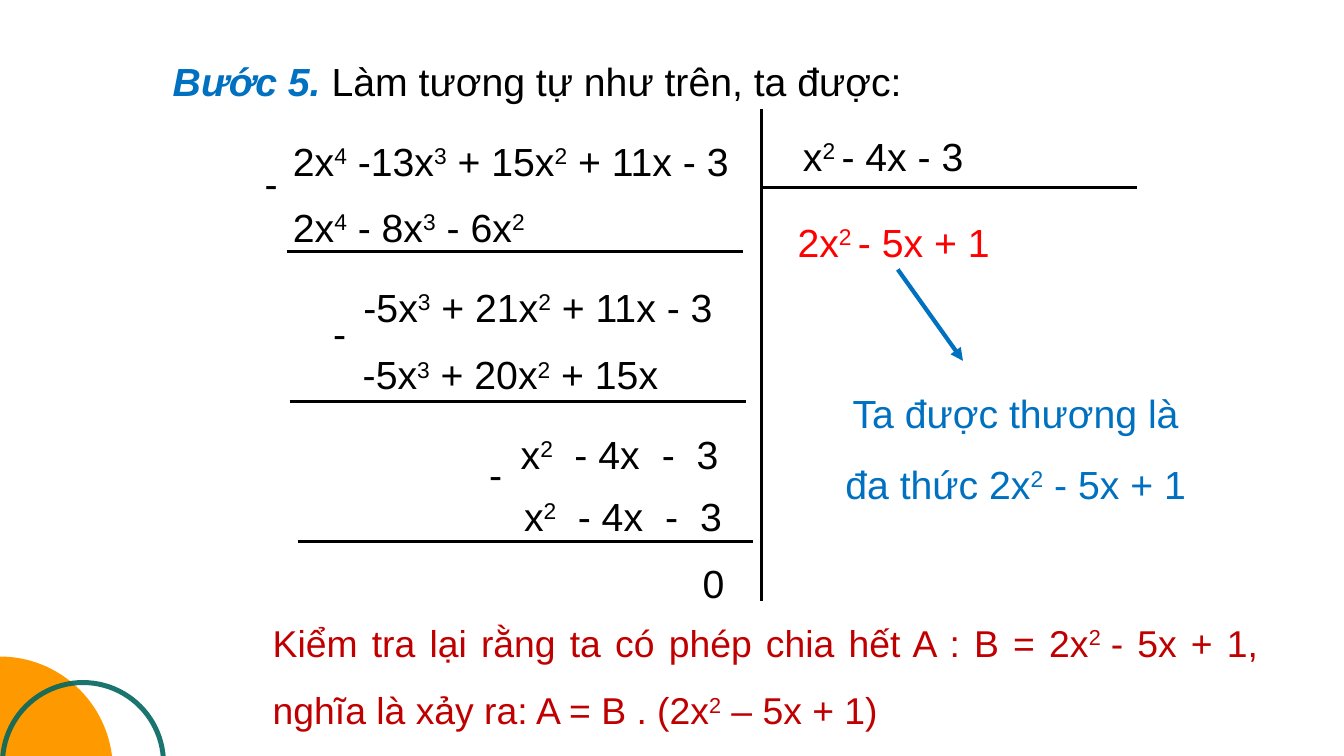
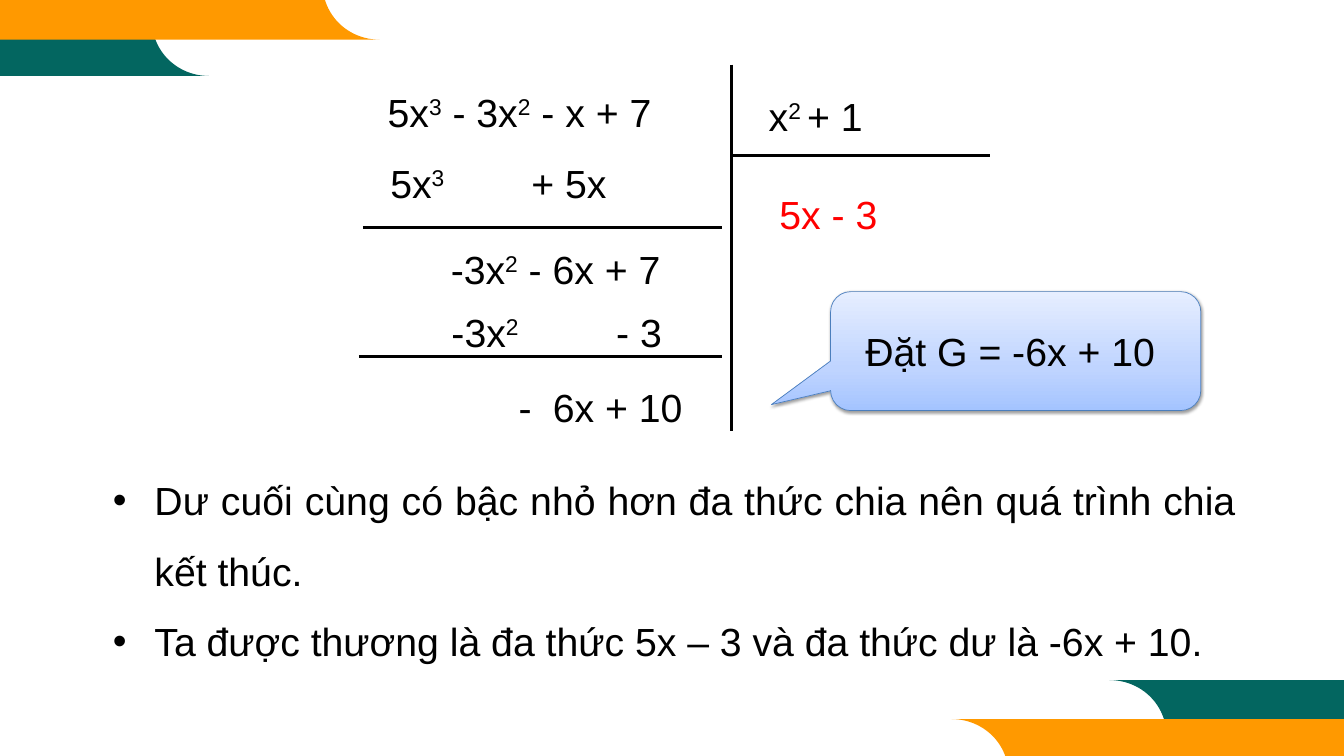
from copy import deepcopy
from dataclasses import dataclass

from lxml import etree
from pptx import Presentation
from pptx.dml.color import RGBColor
from pptx.enum.shapes import MSO_CONNECTOR, MSO_SHAPE
from pptx.enum.text import MSO_ANCHOR, MSO_AUTO_SIZE, PP_ALIGN
from pptx.oxml.ns import qn
from pptx.shapes.autoshape import Shape
from pptx.shapes.connector import Connector
from pptx.slide import Slide
from pptx.text.text import TextFrame
from pptx.util import Inches, Pt

BLACK = RGBColor(0x00, 0x00, 0x00)
RED = RGBColor(0xFF, 0x00, 0x00)
DARK_RED = RGBColor(0xC0, 0x00, 0x00)
BLUE = RGBColor(0x00, 0x70, 0xC0)
ORANGE = RGBColor(0xFF, 0x99, 0x00)
GREEN = RGBColor(0x03, 0x66, 0x60)
CALLOUT_EDGE = RGBColor(0x4B, 0x7E, 0xBC)
CALLOUT_STOPS = (
    (0.0, RGBColor(0xA4, 0xC4, 0xFF)),
    (0.35, RGBColor(0xBF, 0xD4, 0xFF)),
    (1.0, RGBColor(0xE6, 0xEE, 0xFF)),
)

CENTER, RIGHT, JUSTIFY = PP_ALIGN.CENTER, PP_ALIGN.RIGHT, PP_ALIGN.JUSTIFY
TOP, MIDDLE = MSO_ANCHOR.TOP, MSO_ANCHOR.MIDDLE
NO_AUTOFIT = MSO_AUTO_SIZE.NONE
STRAIGHT = MSO_CONNECTOR.STRAIGHT
OVAL, DONUT = MSO_SHAPE.OVAL, MSO_SHAPE.DONUT
CALLOUT = MSO_SHAPE.ROUNDED_RECTANGULAR_CALLOUT

FONT = "Arial"
TITLE_ONLY, BLANK = 5, 6
# Half circle as three Bezier curves: (depth, drop) from the band's corner.
HOLLOW = ((0, 0), (0.31, 0), (0.59, 0.16), (0.74, 0.42), (0.89, 0.68),
          (0.89, 1.01), (0.74, 1.27), (0.59, 1.53), (0.31, 1.69), (0, 1.69))


@dataclass(frozen=True)
class Style:
    colour: RGBColor = BLACK
    size: float = 42
    align: PP_ALIGN = JUSTIFY
    spacing: float = 1.5
    before: float = 0
    after: float = 8


@dataclass(frozen=True)
class Passage:
    """Text with superscripts in braces; tabs are stops in inches."""
    text: str
    left: float
    top: float
    width: float
    height: float = 1.16
    style: Style = Style()
    tabs: tuple[float, ...] = ()


@dataclass(frozen=True)
class Rule:
    x1: float
    y1: float
    x2: float
    y2: float
    colour: RGBColor = BLACK
    weight: float = 3


@dataclass(frozen=True)
class Band:
    left: float
    top: float
    width: float
    colour: RGBColor


SINGLE = Style(spacing=1)
QUOTIENT = Style(colour=RED)
MINUS = Style(align=CENTER, spacing=1, after=0)
REMAINDER = Style(align=RIGHT, spacing=1, after=0)
HEADING = Style(before=6, after=6)
RESULT = Style(colour=BLUE, align=CENTER, before=6, after=6)
CHECK = Style(colour=DARK_RED, size=40, before=6, after=6)
BULLET = Style(after=0)

LAST_ROW_TABS = (0.8, 2.1, 2.62)

STEP_TERMS = (
    Passage("2x{4} -13x{3} + 15x{2} + 11x - 3", 4.26, 1.64, 7.1),
    Passage("2x{4} - 8x{3} - 6x{2}", 4.26, 2.63, 5.16),
    Passage("-5x{3} + 21x{2} + 11x - 3", 5.31, 3.81, 5.74, 0.98),
    Passage("-5x{3} + 20x{2} + 15x", 5.3, 4.82, 5.1),
    Passage("x{2}\t- 4x\t-\t3", 7.65, 6, 3.44, 1.03, tabs=LAST_ROW_TABS),
    Passage("x{2}\t- 4x\t-\t3", 7.7, 6.92, 3.44, 1.03, tabs=LAST_ROW_TABS),
    Passage("0", 9.4, 8.27, 1.48, 0.81, REMAINDER),
    Passage("x{2 }- 4x - 3", 11.85, 1.57, 3.45),
    Passage("2x{2 }- 5x + 1", 11.77, 2.85, 3.2, style=QUOTIENT),
    Passage("Ta được thương là đa thức 2x{2} - 5x + 1",
            12.26, 5.4, 5.71, 2.09, RESULT),
    Passage("Kiểm tra lại rằng ta có phép chia hết A : B = 2x{2 }- 5x + 1, "
            "nghĩa là xảy ra: A = B . (2x{2} – 5x + 1)",
            3.96, 8.84, 14.86, 2, CHECK),
)
MINUS_PLACES = ((3.7, 2.32), (4.72, 4.56), (7.04, 6.65))
STEP_RULES = (
    Rule(11.33, 1.62, 11.33, 8.95),
    Rule(11.33, 2.79, 16.92, 2.79),
    Rule(4.27, 3.74, 11.05, 3.74),
    Rule(4.31, 5.98, 11.1, 5.98),
    Rule(4.43, 8.06, 11.21, 8.06),
)
RESULT_ARROW = Rule(13.36, 4.01, 14.33, 5.37, BLUE, 4.5)

REMAINDER_TERMS = (
    Passage("5x{3} - 3x{2} - x + 7", 5.67, 0.91, 4.94, 0.92),
    Passage("5x{3}\t+ 5x", 5.71, 2.32, 5.41, 0.82, SINGLE, (2.1,)),
    Passage("-3x{2} - 6x + 7", 6.61, 3.25, 4.13, 0.85),
    Passage("-3x{2}\t- 3", 6.62, 4.19, 4.43, tabs=(2.45,)),
    Passage("-\t6x + 10", 7.62, 5.31, 3.79, tabs=(0.51,)),
    Passage("x{2 }+ 1", 11.34, 0.97, 3.12, 0.8),
    Passage("5x - 3", 11.5, 2.43, 2.51, 0.9, QUOTIENT),
)
REMAINDER_RULES = (
    Rule(10.89, 0.96, 10.89, 6.42),
    Rule(10.87, 2.31, 14.73, 2.31),
    Rule(5.4, 3.38, 10.74, 3.38),
    Rule(5.34, 5.31, 10.74, 5.31),
)
CONCLUSIONS = (
    "Dư cuối cùng có bậc nhỏ hơn đa thức chia nên quá trình chia kết thúc.",
    "Ta được thương là đa thức 5x – 3 và đa thức dư là -6x + 10.",
)
BANDS = (
    Band(-1.37, -0.56, 4.48, GREEN),
    Band(-4.49, -1.1, 10.14, ORANGE),
    Band(16.51, 10.12, 4.48, GREEN),
    Band(14.16, 10.7, 10.14, ORANGE),
)


def add_run(paragraph, text: str, style: Style):
    run = paragraph.add_run()
    run.text = text
    run.font.name = FONT
    run.font.size = Pt(style.size)
    run.font.color.rgb = style.colour
    return run


def format_paragraph(paragraph, style: Style) -> None:
    paragraph.alignment = style.align
    paragraph.line_spacing = style.spacing
    paragraph.space_before = Pt(style.before)
    paragraph.space_after = Pt(style.after)


def prepare_frame(frame: TextFrame, anchor: MSO_ANCHOR = TOP) -> None:
    frame.word_wrap = True
    frame.auto_size = NO_AUTOFIT
    frame.vertical_anchor = anchor


def add_frame(slide: Slide, left: float, top: float, width: float, height: float) -> TextFrame:
    box = slide.shapes.add_textbox(Inches(left), Inches(top), Inches(width), Inches(height))
    prepare_frame(box.text_frame)
    return box.text_frame


def add_passage(slide: Slide, passage: Passage) -> None:
    frame = add_frame(slide, passage.left, passage.top, passage.width, passage.height)
    paragraph = frame.paragraphs[0]
    format_paragraph(paragraph, passage.style)
    for index, part in enumerate(passage.text.replace("}", "{").split("{")):
        if part:
            run = add_run(paragraph, part, passage.style)
            if index % 2:
                run.font._element.set("baseline", "30000")
    if passage.tabs:
        stops = etree.SubElement(paragraph._p.get_or_add_pPr(), qn("a:tabLst"))
        for stop in passage.tabs:
            etree.SubElement(stops, qn("a:tab"), pos=str(Inches(stop)), algn="l")


def add_rule(slide: Slide, rule: Rule) -> Connector:
    connector = slide.shapes.add_connector(
        STRAIGHT, Inches(rule.x1), Inches(rule.y1), Inches(rule.x2), Inches(rule.y2))
    connector.line.color.rgb = rule.colour
    connector.line.width = Pt(rule.weight)
    etree.SubElement(connector._element.spPr, qn("a:effectLst"))
    return connector


def add_arrow(slide: Slide, rule: Rule) -> None:
    line = add_rule(slide, rule).line
    etree.SubElement(line._get_or_add_ln(), qn("a:tailEnd"), type="triangle")


def paint(shape: Shape, colour: RGBColor) -> None:
    shape.shadow.inherit = False
    shape.fill.solid()
    shape.fill.fore_color.rgb = colour
    shape.line.fill.background()


def bend(segments: list) -> None:
    """Turn each three straight segments into one Bezier curve."""
    for first in range(0, len(segments), 3):
        curve = etree.Element(qn("a:cubicBezTo"))
        segments[first].addprevious(curve)
        for segment in segments[first:first + 3]:
            curve.append(segment[0])
            segment.getparent().remove(segment)


def add_band(slide: Slide, band: Band) -> None:
    """Draw a strip whose two ends are hollowed by half circles."""
    right = band.left + band.width
    outline = [(right - depth, band.top + drop) for depth, drop in HOLLOW]
    outline += [(band.left + depth, band.top + drop) for depth, drop in reversed(HOLLOW)]
    points = [(Inches(x), Inches(y)) for x, y in outline]
    builder = slide.shapes.build_freeform(*points[0])
    builder.add_line_segments(points[1:])
    strip = builder.convert_to_shape()
    segments = list(strip._element.spPr.iter(qn("a:lnTo")))
    curved = len(HOLLOW) - 1
    bend(segments[:curved])
    bend(segments[curved + 1:2 * curved + 1])
    paint(strip, band.colour)


def add_corner_circles(slide: Slide) -> None:
    disc = slide.shapes.add_shape(OVAL, Inches(-1.68), Inches(9.77), Inches(3.36), Inches(3.38))
    paint(disc, ORANGE)
    ring = slide.shapes.add_shape(DONUT, Inches(0), Inches(10.12), Inches(2.47), Inches(2.47))
    ring.adjustments[0] = 0.03
    paint(ring, GREEN)
    colour = ring._element.spPr.find(f"{qn('a:solidFill')}/{qn('a:srgbClr')}")
    etree.SubElement(colour, qn("a:alpha"), val="90000")


def add_remainder_callout(slide: Slide) -> None:
    callout = slide.shapes.add_shape(
        CALLOUT, Inches(12.36), Inches(4.34), Inches(5.51), Inches(1.77))
    for index, value in enumerate((-0.66, 0.45, 0.17)):
        callout.adjustments[index] = value
    callout.fill.gradient()
    callout.fill.gradient_angle = 90
    properties = callout._element.spPr
    stop_list = properties.find(f"{qn('a:gradFill')}/{qn('a:gsLst')}")
    stop_list.append(deepcopy(stop_list[0]))
    for stop, (position, colour) in zip(callout.fill.gradient_stops, CALLOUT_STOPS):
        stop.position = position
        stop.color.rgb = colour
    callout.line.color.rgb = CALLOUT_EDGE
    callout.line.width = Pt(0.75)
    callout.shadow.inherit = False
    shadow = etree.SubElement(
        properties.find(qn("a:effectLst")), qn("a:outerShdw"),
        blurRad=str(Pt(3.1)), dist=str(Pt(1.6)), dir="5400000", rotWithShape="0")
    shade = etree.SubElement(shadow, qn("a:srgbClr"), val=str(BLACK))
    etree.SubElement(shade, qn("a:alpha"), val="38000")
    prepare_frame(callout.text_frame, MIDDLE)
    paragraph = callout.text_frame.paragraphs[0]
    format_paragraph(paragraph, MINUS)
    add_run(paragraph, "Đặt G = -6x + 10 ", MINUS)


def add_conclusions(slide: Slide) -> None:
    frame = add_frame(slide, 1.58, 6.69, 16.91, 3.28)
    for index, conclusion in enumerate(CONCLUSIONS):
        paragraph = frame.add_paragraph() if index else frame.paragraphs[0]
        format_paragraph(paragraph, BULLET)
        properties = paragraph._p.get_or_add_pPr()
        properties.set("marL", str(Inches(0.62)))
        properties.set("indent", str(Inches(-0.62)))
        etree.SubElement(properties, qn("a:buFont"), typeface=FONT)
        etree.SubElement(properties, qn("a:buChar"), char="•")
        add_run(paragraph, conclusion, BULLET)


def set_step_title(slide: Slide) -> None:
    title = slide.shapes.title
    title.left, title.top = Inches(2.47), Inches(0.45)
    title.width, title.height = Inches(14.85), Inches(1.16)
    prepare_frame(title.text_frame)
    paragraph = title.text_frame.paragraphs[0]
    format_paragraph(paragraph, HEADING)
    step = add_run(paragraph, "Bước 5. ", HEADING)
    step.font.color.rgb = BLUE
    step.font.bold = step.font.italic = True
    add_run(paragraph, "Làm tương tự như trên, ta được:", HEADING)


def add_division(slide: Slide, terms: tuple[Passage, ...], rules: tuple[Rule, ...]) -> None:
    for rule in rules:
        add_rule(slide, rule)
    for term in terms:
        add_passage(slide, term)


def main() -> None:
    deck = Presentation()
    deck.slide_width, deck.slide_height = Inches(20), Inches(11.25)

    exact = deck.slides.add_slide(deck.slide_layouts[TITLE_ONLY])
    add_corner_circles(exact)
    set_step_title(exact)
    add_division(exact, STEP_TERMS, STEP_RULES)
    for left, top in MINUS_PLACES:
        add_passage(exact, Passage("-", left, top, 0.67, 0.81, MINUS))
    add_arrow(exact, RESULT_ARROW)

    with_remainder = deck.slides.add_slide(deck.slide_layouts[BLANK])
    for band in BANDS:
        add_band(with_remainder, band)
    add_division(with_remainder, REMAINDER_TERMS, REMAINDER_RULES)
    add_conclusions(with_remainder)
    add_remainder_callout(with_remainder)

    deck.save("out.pptx")


if __name__ == "__main__":
    main()
